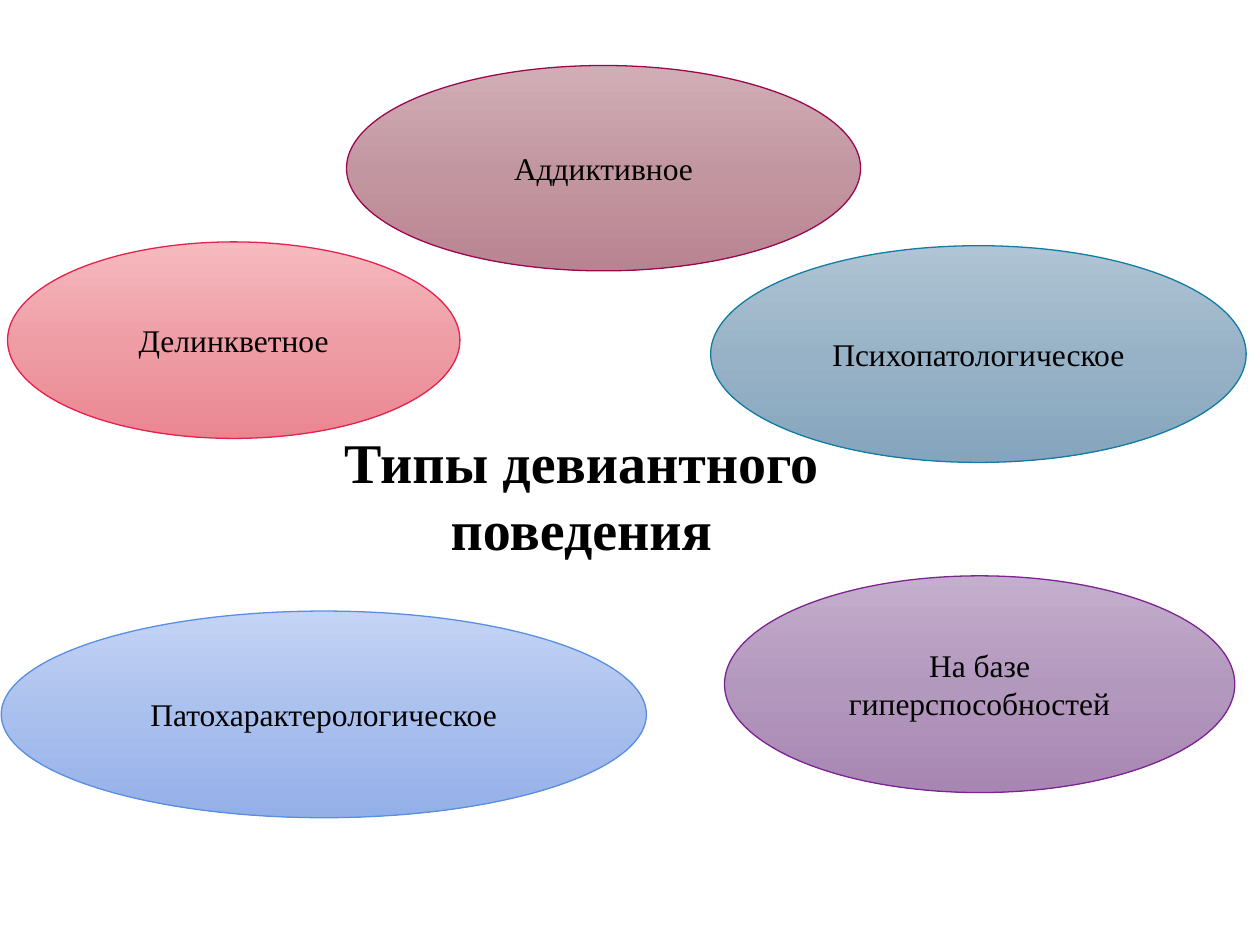
from copy import deepcopy
from dataclasses import dataclass

from pptx import Presentation
from pptx.dml.color import RGBColor
from pptx.enum.shapes import MSO_SHAPE
from pptx.enum.text import MSO_ANCHOR, PP_ALIGN
from pptx.oxml.ns import qn
from pptx.util import Inches, Pt


@dataclass
class Theme:
    """Colours, font and type sizes of the slide."""
    font: str = "Times New Roman"
    ink: str = "000000"
    head: int = 32
    body: int = 18
    edge: float = 0.75
    stops: tuple = (0, 0.52, 1)
    rose: tuple = ("F6BABF", "EE9DA5", "EB8691", "E5224E")
    wine: tuple = ("D1AEB6", "C296A0", "B98491", "9D074E")
    teal: tuple = ("AFC4D4", "97B2C6", "84A5BD", "127CA4")
    blue: tuple = ("C4D4F5", "A9BFED", "94B0E9", "588FE2")
    plum: tuple = ("C4AECD", "B398BD", "A786B3", "7F2294")


class Deck:
    """Holds the theme and the current slide and draws each kind of element."""

    def __init__(self, theme):
        """Start a deck with one title-only slide."""
        self.theme = theme
        self.file = Presentation()
        self.file.slide_width, self.file.slide_height = Inches(10), Inches(7.5)
        self.slide = self.file.slides.add_slide(self.file.slide_layouts[5])

    def label(self, shape, text, size, anchor, bold=False):
        """Put centred text into a shape."""
        frame = shape.text_frame
        frame.text = text
        frame.word_wrap = True
        frame.vertical_anchor = anchor
        for para in frame.paragraphs:
            para.alignment = PP_ALIGN.CENTER
            for run in para.runs:
                run.font.name = self.theme.font
                run.font.size = Pt(size)
                run.font.bold = bold
                run.font.color.rgb = RGBColor.from_string(self.theme.ink)

    def title(self, text, box):
        """Place the slide title in its placeholder."""
        shape = self.slide.shapes.title
        shape.left, shape.top, shape.width, shape.height = map(Inches, box)
        self.label(shape, text, self.theme.head, MSO_ANCHOR.TOP, True)

    def shade(self, shape, tints):
        """Fill a shape with a gradient from top to bottom."""
        fill = shape.fill
        fill.gradient()
        fill.gradient_angle = 270
        first = shape.element.spPr.find(".//" + qn("a:gs"))
        first.addnext(deepcopy(first))
        for stop, place, tint in zip(fill.gradient_stops, self.theme.stops, tints):
            stop.position = place
            stop.color.rgb = RGBColor.from_string(tint)

    def oval(self, text, box, hues):
        """Draw a shaded ellipse with a label."""
        *tints, edge = hues
        shape = self.slide.shapes.add_shape(MSO_SHAPE.OVAL, *map(Inches, box))
        shape.shadow.inherit = False
        self.shade(shape, tints)
        shape.line.color.rgb = RGBColor.from_string(edge)
        shape.line.width = Pt(self.theme.edge)
        self.label(shape, text, self.theme.body, MSO_ANCHOR.MIDDLE)


def main():
    """Build and save the slide."""
    theme = Theme()
    deck = Deck(theme)
    deck.title("Типы девиантного поведения", (2.39, 3.34, 4.45, 1.18))
    types = [
        ("Делинкветное", (0.06, 1.92, 3.59, 1.56), theme.rose),
        ("Аддиктивное", (2.75, 0.52, 4.08, 1.63), theme.wine),
        ("Психопатологическое", (5.64, 1.95, 4.25, 1.72), theme.teal),
        ("Патохарактерологическое", (0.01, 4.85, 5.12, 1.64), theme.blue),
        ("На базе гиперспособностей", (5.75, 4.57, 4.05, 1.72), theme.plum),
    ]
    for text, box, hues in types:
        deck.oval(text, box, hues)
    deck.file.save("out.pptx")


if __name__ == "__main__":
    main()
